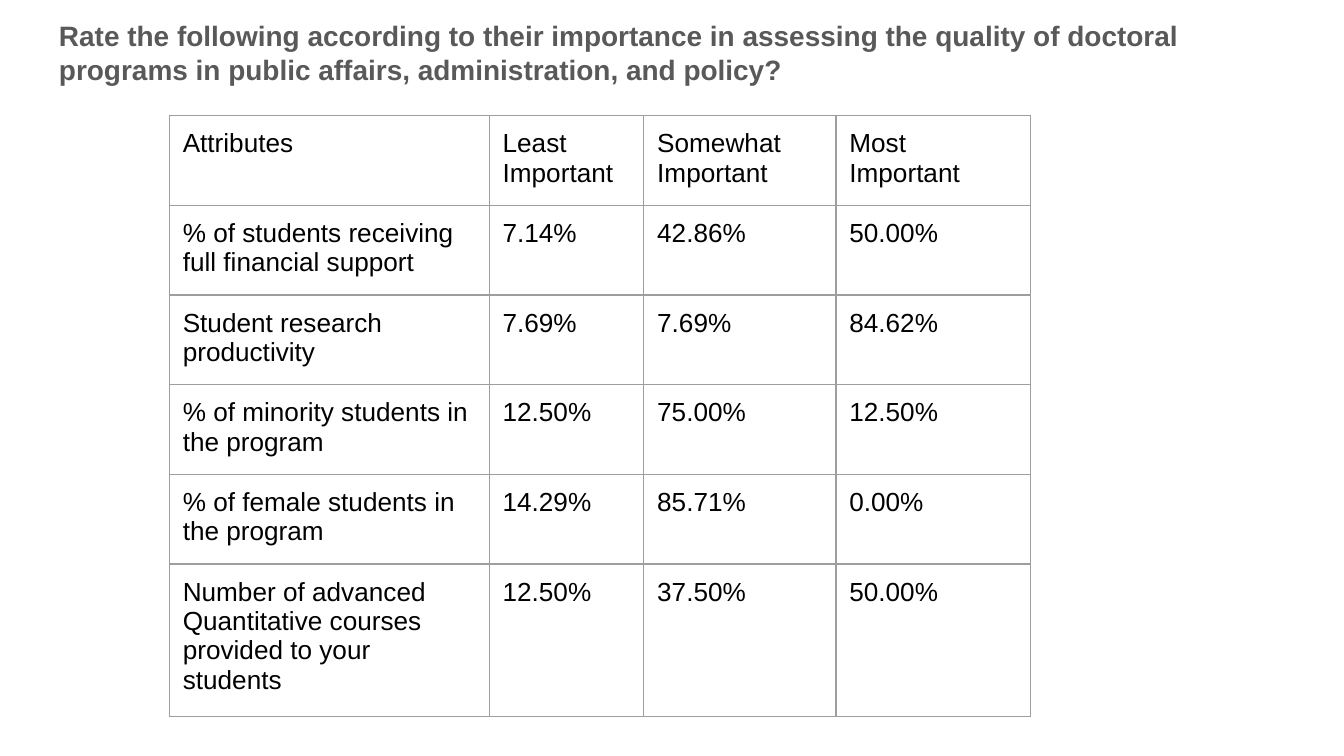
from lxml.etree import SubElement
from pptx import Presentation
from pptx.dml.color import RGBColor
from pptx.oxml.ns import qn
from pptx.util import Inches, Pt

WIDE = 10
HIGH = WIDE * 9 / 16
PAD = 0.1
FONT = "Arial"
GRAY, BLACK, RULE = "595959", "000000", "9E9E9E"

TITLE = ("Rate the following according to their importance in assessing the quality "
         "of doctoral programs in public affairs, administration, and policy?")
ROWS = [
    ("Attributes", "Least Important", "Somewhat Important", "Most Important"),
    ("% of students receiving full financial support", "7.14%", "42.86%", "50.00%"),
    ("Student research productivity", "7.69%", "7.69%", "84.62%"),
    ("% of minority students in the program", "12.50%", "75.00%", "12.50%"),
    ("% of female students in the program", "14.29%", "85.71%", "0.00%"),
    ("Number of advanced Quantitative courses provided to your students",
     "12.50%", "37.50%", "50.00%"),
]
COLS = (2.38, 1.15, 1.43, 1.45)
ROW_H = 0.42
LEFT, TOP = 1.26, 0.86


def write(frame, text, size, color, bold=False):
    """Add one run, and give the paragraph's end mark the same size."""
    frame.word_wrap = True
    para = frame.paragraphs[0]
    run = para.add_run()
    run.text = text
    font = run.font
    font.name, font.size, font.bold = FONT, Pt(size), bold
    font.color.rgb = RGBColor.from_string(color)
    SubElement(para._p, qn("a:endParaRPr"), sz=str(size * 100))


def pad(box):
    """Set equal margins on a cell or a text frame."""
    box.margin_left = box.margin_right = Inches(PAD)
    box.margin_top = box.margin_bottom = Inches(PAD)


def border(cell, color, width):
    props = cell._tc.get_or_add_tcPr()
    for i, side in enumerate(("lnL", "lnR", "lnT", "lnB")):
        line = SubElement(props, qn(f"a:{side}"), w=str(Pt(width)))
        fill = SubElement(line, qn("a:solidFill"))
        SubElement(fill, qn("a:srgbClr"), val=color)
        props.insert(i, line)


def add_title(slide):
    box = slide.shapes.add_textbox(Inches(0.34), Inches(0.04), Inches(9.32), Inches(5.39))
    pad(box.text_frame)
    write(box.text_frame, TITLE, 15, GRAY, bold=True)


def add_ratings(slide):
    table = slide.shapes.add_table(
        len(ROWS), len(COLS), Inches(LEFT), Inches(TOP),
        Inches(sum(COLS)), Inches(ROW_H * len(ROWS))).table
    table.first_row = table.horz_banding = False
    for col, width in zip(table.columns, COLS):
        col.width = Inches(width)
    for row, texts in zip(table.rows, ROWS):
        row.height = Inches(ROW_H)
        for cell, text in zip(row.cells, texts):
            pad(cell)
            cell.fill.background()
            border(cell, RULE, 0.75)
            write(cell.text_frame, text, 14, BLACK)


def main():
    deck = Presentation()
    deck.slide_width, deck.slide_height = Inches(WIDE), Inches(HIGH)
    slide = deck.slides.add_slide(deck.slide_layouts[6])
    add_title(slide)
    add_ratings(slide)
    deck.save("out.pptx")


if __name__ == "__main__":
    main()
